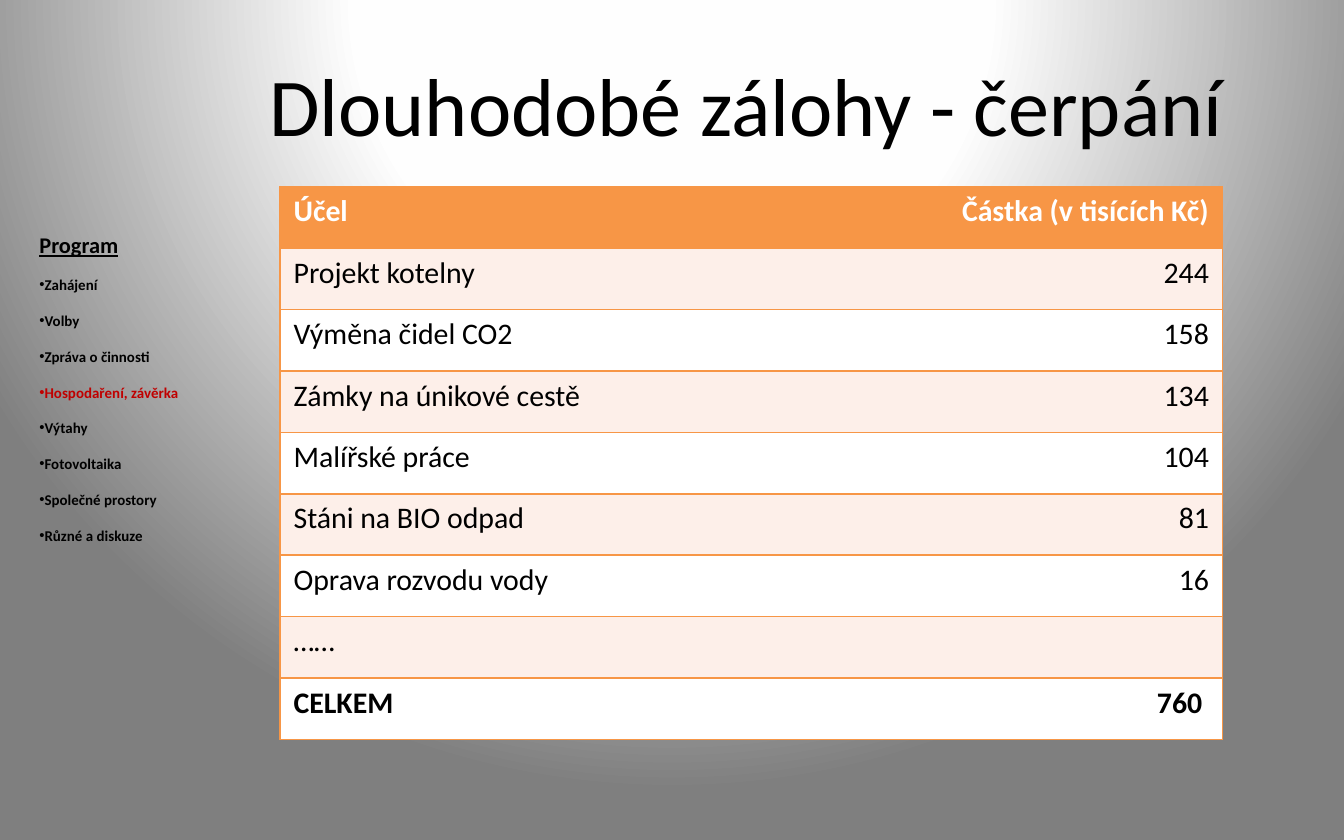
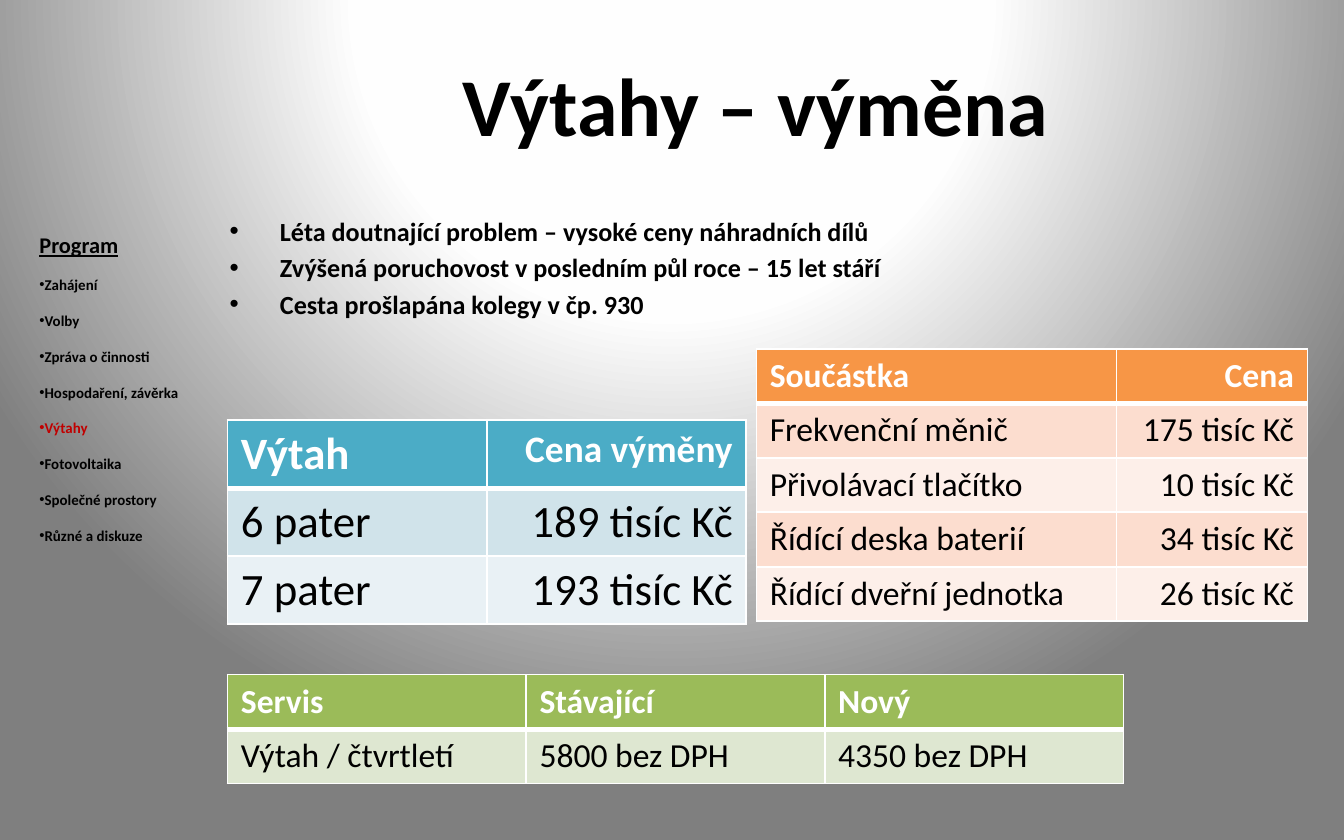
from pptx import Presentation
from pptx.dml.color import RGBColor
from pptx.enum.text import MSO_ANCHOR, PP_ALIGN
from pptx.oxml import parse_xml
from pptx.oxml.ns import nsdecls
from pptx.util import Inches, Pt
from lxml import etree

LEFT, CENTER, RIGHT = PP_ALIGN.LEFT, PP_ALIGN.CENTER, PP_ALIGN.RIGHT
MIDDLE = MSO_ANCHOR.MIDDLE

# The slide is a grid of 100 columns by 62.5 rows.
COLS, ROWS = 100, 62.5
UNIT = Inches(10) / COLS

COLORS = {
    "text": "000000", "white": "FFFFFF", "active": "C00000",
    "near_white": "FEFEFE", "gray": "7F7F7F",
    "orange": "F79646", "orange_mid": "FCDDCF", "orange_light": "FDEFE9",
    "blue": "4BACC6", "blue_mid": "D0E3EA", "blue_light": "E9F1F5",
    "green": "9BBB59", "green_mid": "DEE7D1",
}
GLOW = [(0, "white"), (40, "near_white"), (100, "gray")]
FONT, BULLET_FONT = "Calibri", "Arial"
AGENDA = ["Zahájení", "Volby", "Zpráva o činnosti", "Hospodaření, závěrka",
          "Výtahy", "Fotovoltaika", "Společné prostory", "Různé a diskuze"]

TITLE_BOX = (16.1, 2.5, 78.9, 10.4)
AGENDA_BOX = (1.95, 14.7, 12.6, 29.3)


def grid(*lengths):
    return [round(n * UNIT) for n in lengths]


def add_run(p, text, color="text", **fmt):
    r = p.add_run()
    r.text = text
    for name, value in {"name": FONT, **fmt}.items():
        setattr(r.font, name, value)
    r.font.color.rgb = RGBColor.from_string(COLORS[color])


def add_bullet(p, indent=0):
    """Give p a round bullet hanging by indent grid units."""
    pPr = p._p.get_or_add_pPr()
    hang, = grid(indent)
    pPr.set("marL", str(hang))
    pPr.set("indent", str(-hang))
    for tag in (f'buFont {nsdecls("a")} typeface="{BULLET_FONT}"',
                f'buChar {nsdecls("a")} char="•"'):
        pPr.append(parse_xml(f"<a:{tag}/>"))


def add_box(s, box):
    tf = s.shapes.add_textbox(*grid(*box)).text_frame
    tf.word_wrap = True
    return tf


def next_paragraph(tf, first):
    return tf.paragraphs[0] if first else tf.add_paragraph()


def add_background(s):
    stops = "".join(
        f'<a:gs pos="{pos * 1000}"><a:srgbClr val="{COLORS[c]}"/></a:gs>'
        for pos, c in GLOW)
    s._element.cSld.insert(0, parse_xml(
        f'<p:bg {nsdecls("p", "a")}><p:bgPr>'
        f'<a:gradFill rotWithShape="1"><a:gsLst>{stops}</a:gsLst>'
        '<a:path path="circle"><a:fillToRect l="50000" t="-80000" '
        'r="50000" b="180000"/></a:path></a:gradFill>'
        '<a:effectLst/></p:bgPr></p:bg>'))


def add_title(s, box, text, bold):
    tf = add_box(s, box)
    tf.vertical_anchor = MIDDLE
    p = tf.paragraphs[0]
    p.alignment = CENTER
    add_run(p, text, size=Pt(44), bold=bold)


def add_agenda(s, box, active):
    tf = add_box(s, box)
    p = tf.paragraphs[0]
    p.line_spacing = 2
    add_run(p, "Program", size=Pt(12), bold=True, underline=True)
    for item in AGENDA:
        p = tf.add_paragraph()
        p.line_spacing = 2
        add_bullet(p)
        add_run(p, item, "active" if item == active else "text",
                size=Pt(8), bold=True)


def add_points(s, box, points):
    tf = add_box(s, box)
    for i, text in enumerate(points):
        p = next_paragraph(tf, i == 0)
        if i:
            p.space_before = Pt(2.8)
        add_bullet(p, 3.75)
        add_run(p, text, size=Pt(14), bold=True)


def set_border(cell, side, color, width):
    """Draw one side (L, R, T or B) of a cell; width 0 hides it."""
    ln = etree.SubElement(cell._tc.get_or_add_tcPr(),
                          f"{{{cell._tc.nsmap['a']}}}ln{side}")
    ln.set("w", str(Pt(width)))
    fill = (f'<a:solidFill {nsdecls("a")}><a:srgbClr val="{COLORS[color]}"/>'
            '</a:solidFill>' if width else f'<a:noFill {nsdecls("a")}/>')
    ln.append(parse_xml(fill))


def add_table(s, left, top, height, widths, rows, head, bands, size,
              aligns=(LEFT, RIGHT), line="white", inner=1, rule=3,
              total=False, head_sizes=None):
    """Add a banded table; inner and rule are the widths of the inner
    vertical lines and of the line under the header."""
    frame = s.shapes.add_table(len(rows), len(widths),
                               *grid(left, top, sum(widths), height))
    table = frame.table
    for column, width in zip(table.columns, grid(*widths)):
        column.width = width
    last_row, last_col = len(rows) - 1, len(widths) - 1
    for i, row in enumerate(rows):
        for j, text in enumerate(row):
            cell = table.cell(i, j)
            sides = {"L": inner if j else 1,
                     "R": inner if j < last_col else 1,
                     "T": rule if i == 1 else 1,
                     "B": rule if i == 0 else 1}
            for side, width in sides.items():
                set_border(cell, side, line, width)
            cell.fill.solid()
            fill = bands[(i - 1) % len(bands)] if i else head
            cell.fill.fore_color.rgb = RGBColor.from_string(COLORS[fill])
            p = cell.text_frame.paragraphs[0]
            p.alignment = aligns[j]
            if text:
                pt = head_sizes[j] if head_sizes and i == 0 else size
                add_run(p, text, "text" if i else "white", size=Pt(pt),
                        bold=i == 0 or (total and i == last_row))


def new_slide(prs, title, active, bold=False):
    s = prs.slides.add_slide(prs.slide_layouts[6])
    add_background(s)
    add_title(s, TITLE_BOX, title, bold)
    add_agenda(s, AGENDA_BOX, active)
    return s


def advances_slide(prs):
    s = new_slide(prs, "Dlouhodobé zálohy - čerpání", "Hospodaření, závěrka")
    add_table(s, 20.85, 13.88, 41.15, (48.8, 21.3), [
        ("Účel", "Částka (v tisících Kč)"),
        ("Projekt kotelny", "244"),
        ("Výměna čidel CO2", "158"),
        ("Zámky na únikové cestě", "134"),
        ("Malířské práce", "104"),
        ("Stáni na BIO odpad", "81"),
        ("Oprava rozvodu vody", "16"),
        ("……", ""),
        ("CELKEM", "760 "),
    ], "orange", ("orange_light", "white"), 16,
        line="orange", inner=0, rule=1, total=True)


def lifts_slide(prs):
    s = new_slide(prs, " Výtahy – výměna", "Výtahy", bold=True)
    add_points(s, (16.1, 15.5, 78.7, 11.8), [
        "Léta doutnající problem – vysoké ceny náhradních dílů",
        "Zvýšená poruchovost v posledním půl roce – 15 let stáří",
        "Cesta prošlapána kolegy v čp. 930",
    ])
    add_table(s, 16.93, 31.25, 15.2, (19.3, 19.3), [
        ("Výtah", "Cena výměny"),
        ("6 pater", "189 tisíc Kč"),
        ("7 pater", "193 tisíc Kč"),
    ], "blue", ("blue_mid", "blue_light"), 24, head_sizes=(24, 20))
    add_table(s, 56.28, 25.95, 20.28, (26.8, 14.2), [
        ("Součástka", "Cena"),
        ("Frekvenční měnič", "175 tisíc Kč"),
        ("Přivolávací tlačítko", "10 tisíc Kč"),
        ("Řídící deska baterií", "34 tisíc Kč"),
        ("Řídící dveřní jednotka", "26 tisíc Kč"),
    ], "orange", ("orange_mid", "orange_light"), 18)
    add_table(s, 16.93, 50.2, 8.1, (22.22,) * 3, [
        ("Servis", "Stávající", "Nový"),
        ("Výtah / čtvrtletí", "5800 bez DPH", "4350 bez DPH"),
    ], "green", ("green_mid",), 18, aligns=(LEFT,) * 3)


def main():
    prs = Presentation()
    prs.slide_width, prs.slide_height = grid(COLS, ROWS)
    advances_slide(prs)
    lifts_slide(prs)
    prs.save("out.pptx")


if __name__ == "__main__":
    main()
